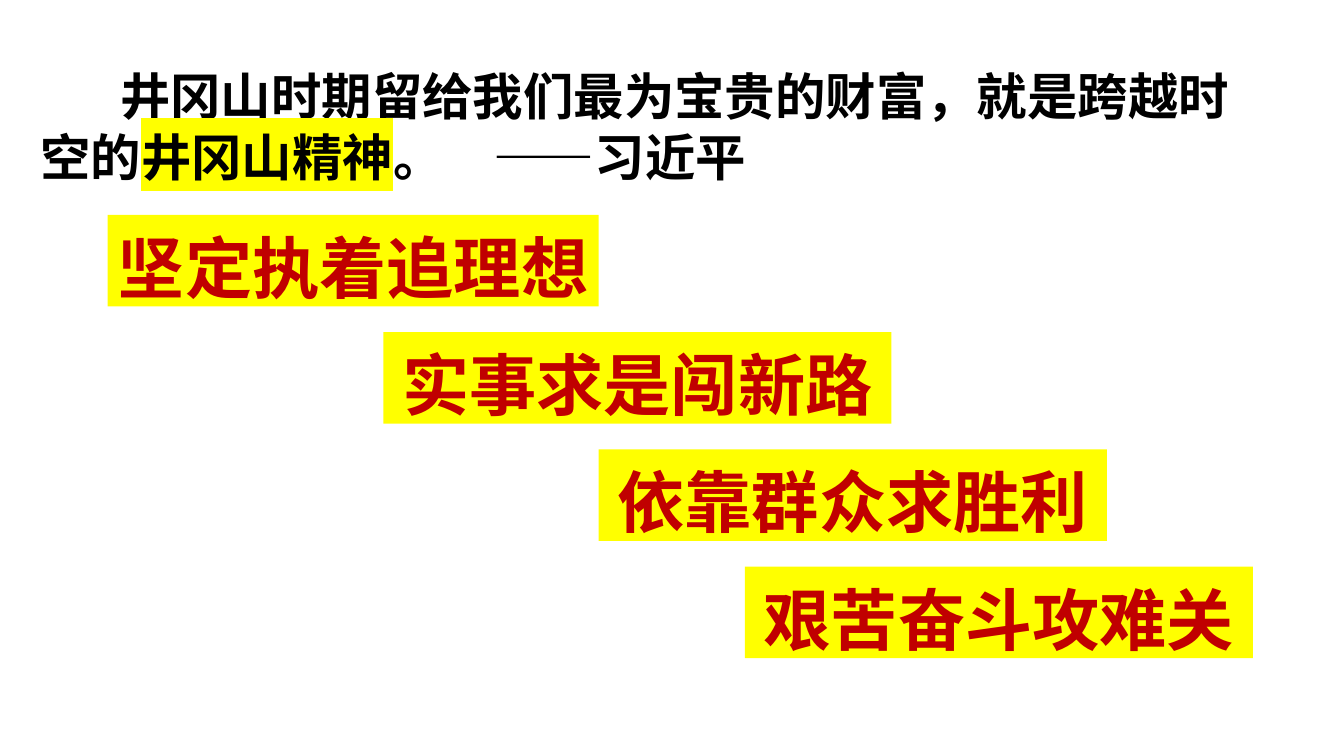
import pptx
import pptx.dml.color
import pptx.enum.shapes
import pptx.enum.text
import pptx.oxml
import pptx.oxml.ns
import pptx.util

Pt = pptx.util.Pt
RGBColor = pptx.dml.color.RGBColor
PP_ALIGN = pptx.enum.text.PP_ALIGN
MSO_ANCHOR = pptx.enum.text.MSO_ANCHOR

FONT = "Noto Sans CJK SC"
BLACK = RGBColor(0x00, 0x00, 0x00)
RED = RGBColor(0xC0, 0x00, 0x00)
YELLOW = RGBColor(0xFF, 0xFF, 0x00)
WHITE = RGBColor(0xFF, 0xFF, 0xFF)

SPIRIT = [
    ("坚定执着追理想", 77, 350.6),
    ("实事求是闯新路", 273.8, 363),
    ("依靠群众求胜利", 427.6, 363),
    ("艰苦奋斗攻难关", 532, 363),
]


def make_element(tag, color=None, **attrs):
    """Return a DrawingML element, with an optional colour inside it."""
    el = pptx.oxml.parse_xml(f"<a:{tag} {pptx.oxml.ns.nsdecls('a')}/>")
    for name, value in attrs.items():
        el.set(name, str(value))
    if color is not None:
        el.append(make_element("srgbClr", val=color))
    return el


def add_run(p, text, size=36, color=BLACK, highlight=None, outline=None):
    """Add a bold run with its format to a paragraph."""
    r = p.add_run()
    r.text = text
    r.font.size = Pt(size)
    r.font.bold = True
    r.font.name = FONT
    r.font.color.rgb = color
    rPr = r.font._element
    latin = rPr.find(pptx.oxml.ns.qn("a:latin"))
    latin.addnext(make_element("ea", typeface=FONT))
    if highlight is not None:
        latin.addprevious(make_element("highlight", highlight))
    if outline is not None:
        ln = make_element("ln", w=Pt(0.75))
        ln.append(make_element("solidFill", outline))
        rPr.insert(0, ln)


def set_frame(tf, anchor, left, top, right, bottom, wrap=True):
    """Set the insets, anchor and wrapping of a text frame."""
    tf.auto_size = pptx.enum.text.MSO_AUTO_SIZE.NONE
    tf.word_wrap = wrap
    tf.vertical_anchor = anchor
    tf.margin_left, tf.margin_top = Pt(left), Pt(top)
    tf.margin_right, tf.margin_bottom = Pt(right), Pt(bottom)


def add_quote(s, x, y, w, h):
    """Place the quotation and its author in the title placeholder."""
    sp = s.shapes.title
    sp.left, sp.top, sp.width, sp.height = Pt(x), Pt(y), Pt(w), Pt(h)
    set_frame(sp.text_frame, MSO_ANCHOR.TOP, 7.2, 6.5, 7.2, 0)
    p = sp.text_frame.paragraphs[0]
    p.alignment = PP_ALIGN.LEFT
    p.line_spacing = Pt(43.2)
    pPr = p._p.get_or_add_pPr()
    pPr.set("indent", str(Pt(57)))
    tabs = make_element("tabLst")
    tabs.append(make_element("tab", pos=Pt(478), algn="l"))
    pPr.append(tabs)
    add_run(p, "井冈山时期留给我们最为宝贵的财富，就是跨越时空的")
    add_run(p, "井冈山精神", highlight=YELLOW)
    add_run(p, "。\t——习近平")


def add_banner(shapes, text, x, y, w, h):
    """Add one yellow banner with outlined red text."""
    sp = shapes.add_shape(pptx.enum.shapes.MSO_SHAPE.RECTANGLE, Pt(x), Pt(y), Pt(w), Pt(h))
    sp.shadow.inherit = False
    sp.fill.solid()
    sp.fill.fore_color.rgb = YELLOW
    sp.line.fill.background()
    set_frame(sp.text_frame, MSO_ANCHOR.MIDDLE, 7.2, 8, 7.2, 0, wrap=False)
    p = sp.text_frame.paragraphs[0]
    p.alignment = PP_ALIGN.CENTER
    p.line_spacing = Pt(58)
    add_run(p, text, size=48, color=RED, outline=WHITE)


def add_staircase(s, y, h, step):
    """Place the banners as a grouped staircase with equal steps down."""
    group = s.shapes.add_group_shape()
    for i, (text, x, w) in enumerate(SPIRIT):
        add_banner(group.shapes, text, x, y + i * step, w, h)


def main():
    """Build and save the slide."""
    prs = pptx.Presentation()
    prs.slide_width, prs.slide_height = Pt(960), Pt(540)
    s = prs.slides.add_slide(prs.slide_layouts[5])
    add_quote(s, 21.6, 40.3, 893.5, 94.3)
    add_staircase(s, 153.4, 65.4, 83.8)
    prs.save("out.pptx")


if __name__ == "__main__":
    main()
